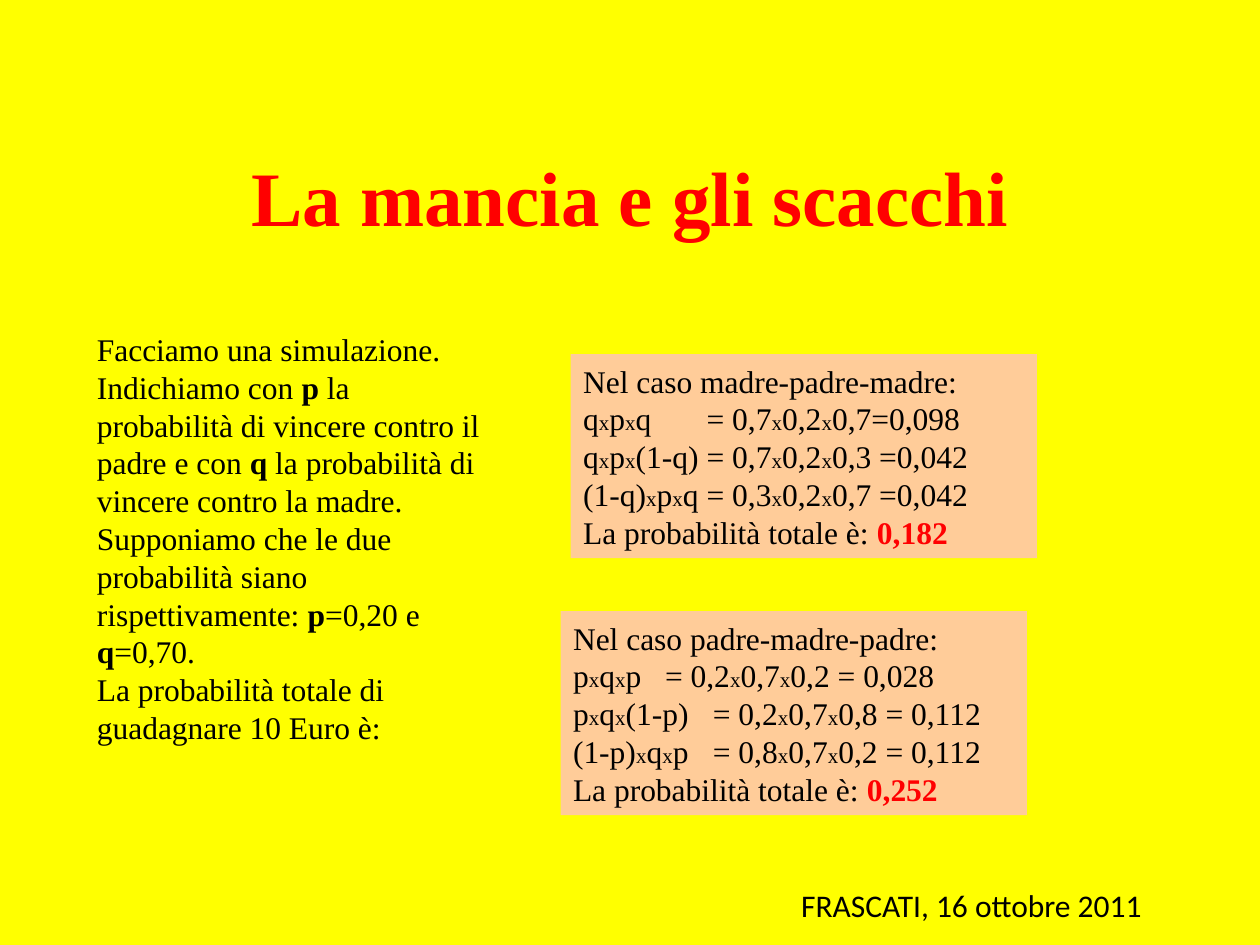
"""Build the slide on the tip and the chess games."""
from lxml import etree
from pptx import Presentation
from pptx.dml.color import RGBColor
from pptx.enum.shapes import MSO_SHAPE
from pptx.enum.text import MSO_ANCHOR, PP_ALIGN
from pptx.oxml.ns import qn
from pptx.util import Inches, Pt

RECT = MSO_SHAPE.RECTANGLE
MIDDLE = MSO_ANCHOR.MIDDLE
LEFT, CENTER = PP_ALIGN.LEFT, PP_ALIGN.CENTER
YELLOW = RGBColor(0xFF, 0xFF, 0x00)
RED = RGBColor(0xFF, 0x00, 0x00)
BLACK = RGBColor(0x00, 0x00, 0x00)
PEACH = RGBColor(0xFF, 0xCC, 0x99)
SERIF, SANS = "Times New Roman", "Calibri"


def add_run(par, text, size=18, color=BLACK, bold=False, face=SERIF):
    run = par.add_run()
    run.text = text
    run.font.name = face
    run.font.size = Pt(size)
    run.font.bold = bold
    run.font.color.rgb = color


def add_text(left, top, width, height):
    box = slide.shapes.add_textbox(Inches(left), Inches(top), Inches(width), Inches(height))
    box.text_frame.word_wrap = True
    return box.text_frame


prs = Presentation()
prs.slide_width, prs.slide_height = Inches(10), Inches(7.5)
slide = prs.slides.add_slide(prs.slide_layouts[6])
slide.background.fill.solid()
slide.background.fill.fore_color.rgb = YELLOW

title = add_text(0.75, 0.92, 8.5, 1.26)
title.vertical_anchor = MIDDLE
title.paragraphs[0].alignment = CENTER
add_run(title.paragraphs[0], "La mancia e gli scacchi", 44, RED, True)

story = [
    ["Facciamo una simulazione."],
    ["Indichiamo con ", "p", " la probabilità di vincere contro il padre e con ", "q",
     " la probabilità di vincere contro la madre. Supponiamo che le due probabilità"
     " siano rispettivamente: ", "p", "=0,20 e ", "q", "=0,70."],
    ["La probabilità totale di guadagnare 10 Euro è:"],
]
frame = add_text(0.67, 2.57, 3.31, 3.43)
for i, parts in enumerate(story):
    par = frame.add_paragraph() if i else frame.paragraphs[0]
    for part in parts:
        add_run(par, part, bold=part in ("p", "q"))

cases = [
    (4.53, 2.81, "Nel caso madre-padre-madre:", "0,182",
     [("qxpxq\t= 0,7x0,2x0,7=0,098", 0.98),
      ("qxpx(1-q)\t= 0,7x0,2x0,3 =0,042", 0.98),
      ("(1-q)xpxq\t= 0,3x0,2x0,7 =0,042", 0.98)]),
    (4.45, 4.85, "Nel caso padre-madre-padre:", "0,252",
     [("pxqxp\t= 0,2x0,7x0,2 = 0,028", 0.73),
      ("pxqx(1-p)\t= 0,2x0,7x0,8 = 0,112", 1.11),
      ("(1-p)xqxp\t= 0,8x0,7x0,2 = 0,112", 1.11)]),
]
for left, top, head, total, rows in cases:
    card = slide.shapes.add_shape(RECT, Inches(left), Inches(top), Inches(3.7), Inches(1.62))
    card.shadow.inherit = False
    card.fill.solid()
    card.fill.fore_color.rgb = PEACH
    card.line.fill.background()
    frame = card.text_frame
    frame.word_wrap = True
    par = frame.paragraphs[0]
    par.alignment = LEFT
    add_run(par, head)
    for row, stop in rows:
        par = frame.add_paragraph()
        par.alignment = LEFT
        tabs = etree.SubElement(par._p.get_or_add_pPr(), qn("a:tabLst"))
        etree.SubElement(tabs, qn("a:tab"), pos=str(Inches(stop)), algn="l")
        for i, term in enumerate(row.split("x")):
            if i:
                add_run(par, "x", 12)
            add_run(par, term)
    par = frame.add_paragraph()
    par.alignment = LEFT
    add_run(par, "La probabilità totale è: ")
    add_run(par, total, color=RED, bold=True)

place = add_text(6.26, 6.98, 3.07, 0.4)
add_run(place.paragraphs[0], "FRASCATI, 16 ottobre 2011", face=SANS)

prs.save("out.pptx")
